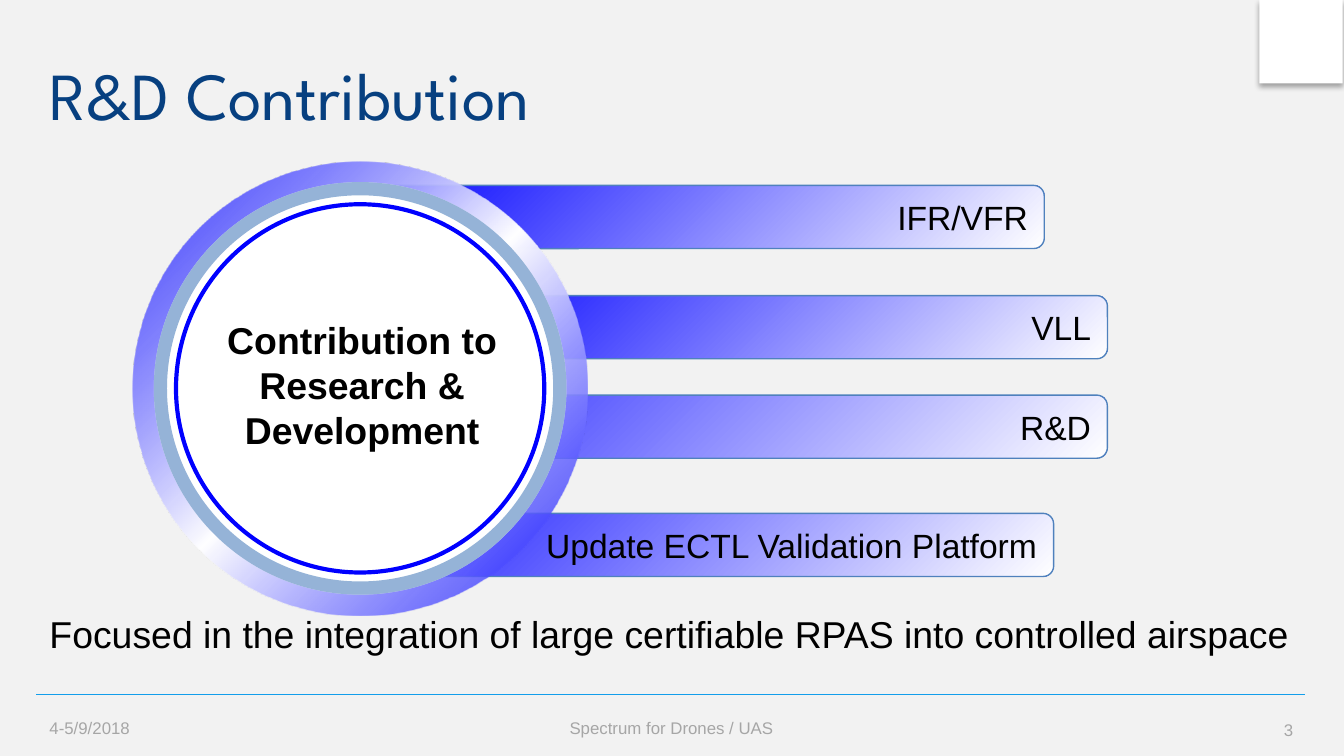
from lxml import etree
from pptx import Presentation
from pptx.dml.color import RGBColor
from pptx.enum import shapes, text
from pptx.oxml import ns
from pptx.util import Inches, Pt

# Content
TITLE = "R&D Contribution"
HUB = "Contribution to Research & Development"
SUMMARY = "Focused in the integration of large certifiable RPAS into controlled airspace"
BARS = [  # text, left, top, right
    ("IFR/VFR", 2.65, 1.38, 7.77),
    ("VLL", 3.12, 2.2, 8.24),
    ("R&D", 1.78, 2.94, 8.24),
    ("Update ECTL Validation Platform", 2.1, 3.82, 7.84),
]
LEFT, CENTER, RIGHT = text.PP_ALIGN.LEFT, text.PP_ALIGN.CENTER, text.PP_ALIGN.RIGHT
FOOTER = [  # text, box, alignment
    ("4-5/9/2018", (0.27, 5.25, 1, 0.33), LEFT),
    ("Spectrum for Drones / UAS", (1.85, 5.25, 6.29, 0.33), CENTER),
    ("3", (8.94, 5.28, 0.78, 0.3), RIGHT),
]
COLORS = dict(back="F2F2F2", white="FFFFFF", black="000000", blue="0000FF",
              title="074080", steel="4F81BD", rule="139EEB", gray="A6A6A6")
SLIDE_WIDTH = 10
BAR_HEIGHT = 0.47
HUB_X, HUB_Y = 2.68, 2.89
SHAPE = shapes.MSO_SHAPE


def rgb(name):
    return RGBColor.from_string(COLORS[name])


def add_alpha(color, percent):
    etree.SubElement(color, ns.qn("a:alpha"), val=str(percent * 1000))


def set_gradient(sp, stops):
    """Diagonal gradient from (position, colour, opacity) stops, in percent."""
    sp.fill.gradient()
    sp.fill.gradient_angle = 315
    gs_list = sp._element.spPr.find(".//" + ns.qn("a:gsLst"))
    for gs in list(gs_list):
        gs_list.remove(gs)
    for pos, name, opacity in stops:
        gs = etree.SubElement(gs_list, ns.qn("a:gs"), pos=str(pos * 1000))
        color = etree.SubElement(gs, ns.qn("a:srgbClr"), val=COLORS[name])
        if opacity < 100:
            add_alpha(color, opacity)


def write(sp, words, size, color="black", font="Arial", bold=False,
          align=LEFT, anchor=text.MSO_ANCHOR.MIDDLE):
    tf = sp.text_frame
    tf.word_wrap = True
    tf.vertical_anchor = anchor
    p = tf.paragraphs[0]
    p.alignment = align
    r = p.add_run()
    r.text = words
    r.font.size, r.font.name, r.font.bold = Pt(size), font, bold
    r.font.color.rgb = rgb(color)


def add_shape(s, kind, box, fill=None, line=None, width=0.75):
    sp = s.shapes.add_shape(kind, *map(Inches, box))
    sp.shadow.inherit = False
    if fill:
        sp.fill.solid()
        sp.fill.fore_color.rgb = rgb(fill)
    if line:
        sp.line.color.rgb = rgb(line)
        sp.line.width = Pt(width)
    else:
        sp.line.fill.background()
    return sp


def add_text(s, box, words, size, **fmt):
    write(s.shapes.add_textbox(*map(Inches, box)), words, size, **fmt)


def hub_box(d):
    return HUB_X - d / 2, HUB_Y - d / 2, d, d


def main():
    # 16:9 slide
    prs = Presentation()
    prs.slide_width = Inches(SLIDE_WIDTH)
    prs.slide_height = Inches(SLIDE_WIDTH * 9 / 16)
    s = prs.slides.add_slide(prs.slide_layouts[5])
    s.background.fill.solid()
    s.background.fill.fore_color.rgb = rgb("back")

    # Corner square with a soft shadow
    sp = add_shape(s, SHAPE.RECTANGLE, (9.37, 0, 0.62, 0.62), "white")
    effects = sp._element.spPr.find(ns.qn("a:effectLst"))
    shadow = etree.SubElement(effects, ns.qn("a:outerShdw"), blurRad=str(Pt(3.1)),
                              dist=str(Pt(1.8)), dir="5400000", rotWithShape="0")
    add_alpha(etree.SubElement(shadow, ns.qn("a:srgbClr"), val=COLORS["black"]), 35)

    # Footer rule
    rule = s.shapes.add_connector(shapes.MSO_CONNECTOR.STRAIGHT, Inches(0.27),
                                  Inches(5.17), Inches(9.71), Inches(5.17))
    rule.line.color.rgb = rgb("rule")
    rule.line.width = Pt(0.75)
    etree.SubElement(rule._element.spPr, ns.qn("a:effectLst"))

    # Title, summary and footer
    title = s.shapes.title
    title.left, title.top, title.width, title.height = map(
        Inches, (0.27, 0.23, 8.68, 0.94))
    write(title, TITLE, 36, color="title", font="League Spartan")
    add_text(s, (0.27, 4.5, 9.6, 0.52), SUMMARY, 20, anchor=text.MSO_ANCHOR.TOP)
    for words, box, align in FOOTER:
        add_text(s, box, words, 9, color="gray", align=align)

    # Bars
    for words, left, top, right in BARS:
        sp = add_shape(s, SHAPE.ROUNDED_RECTANGLE,
                       (left, top, right - left, BAR_HEIGHT), line="steel")
        sp.adjustments[0] = 0.167
        set_gradient(sp, [(0, "blue", 100), (100, "white", 100)])
        write(sp, words, 18, align=RIGHT)

    # Hub: outer ring, white disc, inner ring, outlined disc
    ring = add_shape(s, SHAPE.DONUT, hub_box(3.38))
    ring.adjustments[0] = 0.105
    set_gradient(ring, [(0, "blue", 74), (50, "white", 100), (100, "blue", 74)])
    add_shape(s, SHAPE.OVAL, hub_box(3.07), "white")
    ring = add_shape(s, SHAPE.DONUT, hub_box(3.07), "steel")
    ring.adjustments[0] = 0.032
    add_alpha(ring._element.spPr.find(".//" + ns.qn("a:srgbClr")), 60)
    add_shape(s, SHAPE.OVAL, hub_box(2.74), "white", "blue", 2.25)
    add_text(s, (1.55, 2.31, 2.29, 1.11), HUB, 20, bold=True, align=CENTER,
             anchor=text.MSO_ANCHOR.TOP)

    prs.save("out.pptx")


if __name__ == "__main__":
    main()
